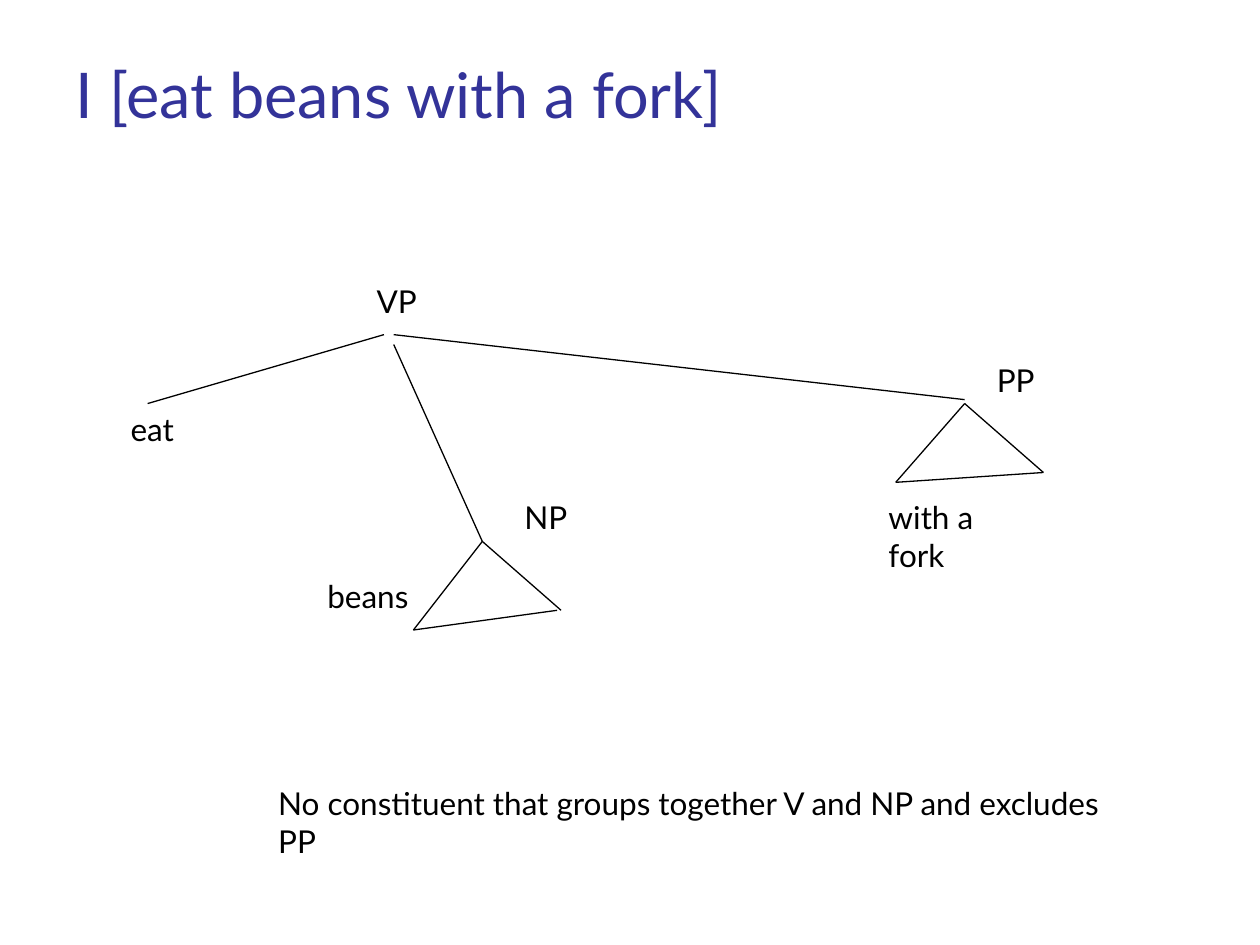
from dataclasses import dataclass
from typing import NamedTuple

from pptx import Presentation, util as u
from pptx.dml.color import RGBColor
from pptx.enum import shapes, text
from pptx.oxml.ns import qn
from lxml import etree


@dataclass(frozen=True)
class Theme:
    font: str = "Lato"
    title: RGBColor = RGBColor(0x33, 0x33, 0x99)
    ink: RGBColor = RGBColor(0, 0, 0)
    title_size: int = 36
    body_size: int = 18
    line_width: float = 0.75


class Point(NamedTuple):
    col: float
    row: float


class Label(NamedTuple):
    words: str
    at: Point
    cols: float
    rows: float = 2.56


THEME = Theme()
WIDTH, HEIGHT = u.Inches(10), u.Inches(7.5)
COLS, ROWS = 64, 48

VP_FOOT = Point(20, 17.5)
NP_TOP, NP_LEFT, NP_RIGHT = Point(24.5, 27.5), Point(21, 32), Point(28.5, 31)
PP_TOP, PP_LEFT, PP_RIGHT = Point(49, 20.5), Point(45.5, 24.5), Point(53, 24)

TITLE = Label("I [eat beans with a fork]", Point(3.2, 1.92), 57.6, 5.06)
LABELS = [
    Label("VP", Point(18.5, 14), 3.5),
    Label("NP", Point(26, 25), 3.5),
    Label("PP", Point(50, 18), 3.5),
    Label("eat", Point(6, 20.5), 3.5),
    Label("beans", Point(16, 29), 5.7),
    Label("with a fork", Point(44.5, 25), 8.64),
    Label("No constituent that groups together V and NP and excludes\nPP",
          Point(13.5, 39.5), 43.84, 4.54),
]
BRANCHES = [
    (Point(19.5, 17), Point(7.5, 20.5)),
    (VP_FOOT, NP_TOP),
    (Point(20, 17), Point(49, 20.3)),
    (NP_TOP, NP_LEFT),
    (NP_TOP, NP_RIGHT),
    (NP_LEFT, Point(28.3, 31)),
    (PP_TOP, PP_LEFT),
    (PP_TOP, PP_RIGHT),
    (PP_LEFT, PP_RIGHT),
]


def place(p: Point) -> tuple[int, int]:
    return round(p.col * WIDTH / COLS), round(p.row * HEIGHT / ROWS)


def add_text(s, label: Label, *, size: int = THEME.body_size,
             color: RGBColor = THEME.ink,
             anchor=text.MSO_ANCHOR.TOP) -> None:
    extent = place(Point(label.cols, label.rows))
    tf = s.shapes.add_textbox(*place(label.at), *extent).text_frame
    tf.word_wrap = True
    tf.vertical_anchor = anchor
    tf.text = label.words
    for p in tf.paragraphs:
        p.font.name = THEME.font
        p.font.size = u.Pt(size)
        p.font.color.rgb = color


def add_branch(s, start: Point, end: Point) -> None:
    line = s.shapes.add_connector(shapes.MSO_CONNECTOR.STRAIGHT,
                                  *place(start), *place(end))
    line.line.color.rgb = THEME.ink
    line.line.width = u.Pt(THEME.line_width)
    etree.SubElement(line._element.spPr, qn("a:effectLst"))


def main() -> None:
    prs = Presentation()
    prs.slide_width, prs.slide_height = WIDTH, HEIGHT
    s = prs.slides.add_slide(prs.slide_layouts[6])
    add_text(s, TITLE, size=THEME.title_size, color=THEME.title,
             anchor=text.MSO_ANCHOR.BOTTOM)
    for label in LABELS:
        add_text(s, label)
    for start, end in BRANCHES:
        add_branch(s, start, end)
    prs.save("out.pptx")


if __name__ == "__main__":
    main()
